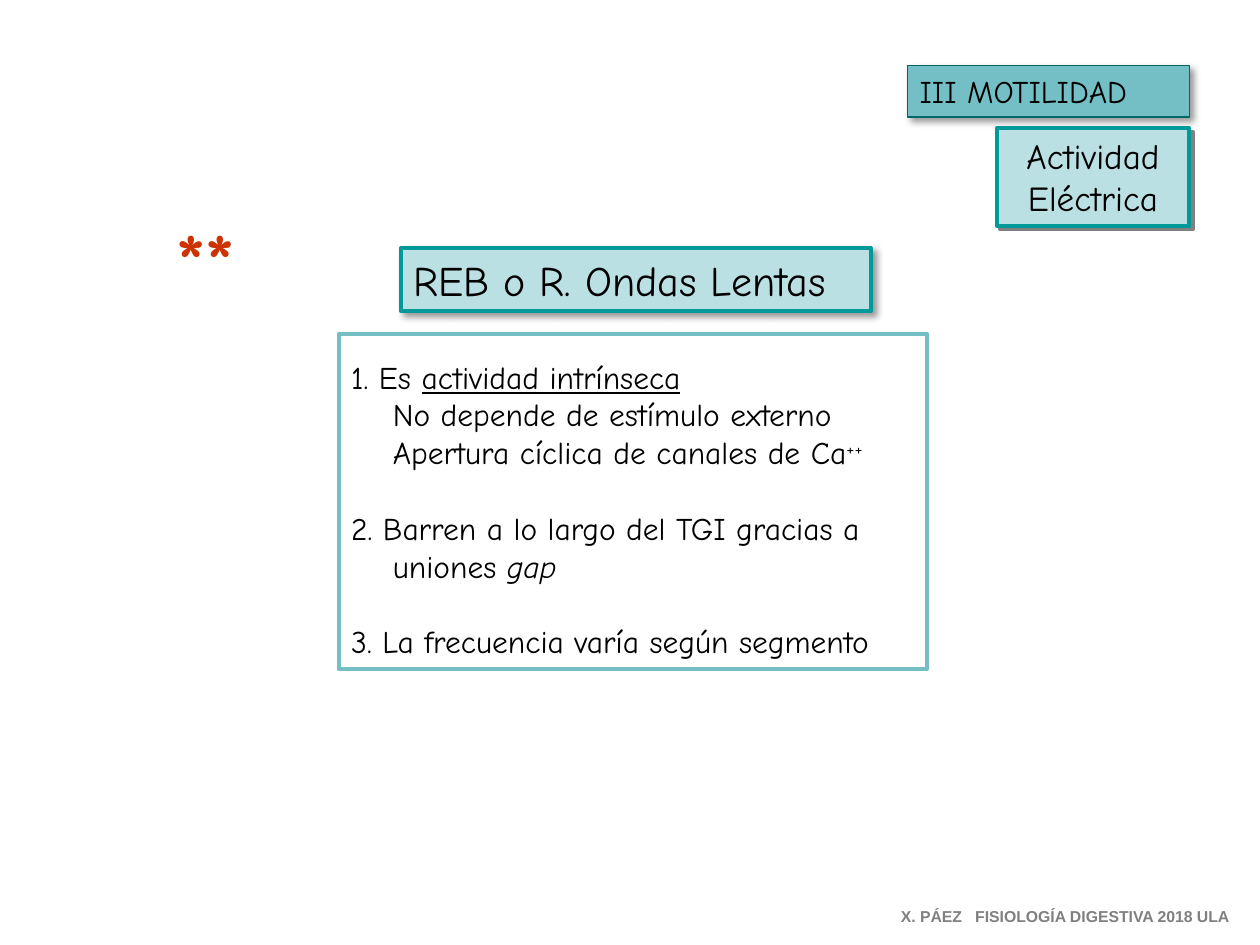
from dataclasses import dataclass

from lxml import etree
from pptx import Presentation
from pptx.dml.color import RGBColor
from pptx.enum.shapes import MSO_SHAPE
from pptx.enum.text import MSO_ANCHOR, MSO_AUTO_SIZE, PP_ALIGN
from pptx.oxml.ns import qn
from pptx.util import Cm, Pt

RECTANGLE = MSO_SHAPE.RECTANGLE
TOP = MSO_ANCHOR.TOP
NO_AUTOFIT = MSO_AUTO_SIZE.NONE
LEFT, CENTER = PP_ALIGN.LEFT, PP_ALIGN.CENTER
TITLE_ONLY = 5


@dataclass(frozen=True)
class Theme:
    font: str = "Comic Neue"
    footer_font: str = "Arial"
    text: str = "000000"
    pale: str = "BBE0E3"
    teal: str = "73BFC5"
    frame: str = "74BEC4"
    border: str = "009999"
    dark_border: str = "006666"
    accent: str = "CC3300"
    gray: str = "808080"
    title_size: int = 24
    topic_size: int = 20
    body_size: int = 18
    mark_size: int = 44
    footer_size: int = 9


THEME = Theme()
# Colour, opacity in percent, blur and distance in points
SOFT_SHADOW = ("000000", 40, 4, 3)
HARD_SHADOW = (THEME.gray, 100, 0, 2.8)


def add_shadow(effects, color, opacity, blur, distance):
    """Put a shadow toward the lower right into an effect list."""
    shadow = etree.SubElement(
        effects, qn("a:outerShdw"), blurRad=str(Pt(blur)),
        dist=str(Pt(distance)), dir="2700000", algn="tl", rotWithShape="0")
    shade = etree.SubElement(shadow, qn("a:srgbClr"), val=color)
    etree.SubElement(shade, qn("a:alpha"), val=str(opacity * 1000))


def place(shape, left, top, width, height):
    shape.left, shape.top = Cm(left), Cm(top)
    shape.width, shape.height = Cm(width), Cm(height)


def prepare_text(shape, top_margin=0.13):
    frame = shape.text_frame
    frame.word_wrap = True
    frame.auto_size = NO_AUTOFIT
    frame.vertical_anchor = TOP
    frame.margin_left = frame.margin_right = Cm(0.25)
    frame.margin_top, frame.margin_bottom = Cm(top_margin), Cm(0.13)
    return frame


def add_run(paragraph, text, size, color=THEME.text, font=THEME.font, bold=False):
    run = paragraph.add_run()
    run.text = text
    run.font.size = Pt(size)
    run.font.bold = bold
    run.font.color.rgb = RGBColor.from_string(color)
    run.font.name = font
    return run


def style_box(shape, fill, line, line_width, shadow=None):
    if fill:
        shape.fill.solid()
        shape.fill.fore_color.rgb = RGBColor.from_string(fill)
    else:
        shape.fill.background()
    shape.line.color.rgb = RGBColor.from_string(line)
    shape.line.width = Pt(line_width)
    shape.shadow.inherit = False
    if shadow:
        effects = shape.element.spPr.find(qn("a:effectLst"))
        add_shadow(effects, *shadow)


def add_title(slide, text):
    title = slide.shapes.title
    place(title, 8.08, 5, 9.47, 1.27)
    style_box(title, THEME.pale, THEME.border, 2.25, SOFT_SHADOW)
    paragraph = prepare_text(title).paragraphs[0]
    paragraph.alignment = LEFT
    add_run(paragraph, text, THEME.title_size)


def add_label(slide, bounds, text, size, style, alignment=LEFT):
    label = slide.shapes.add_shape(RECTANGLE, *map(Cm, bounds))
    style_box(label, *style)
    paragraph = prepare_text(label).paragraphs[0]
    paragraph.alignment = alignment
    add_run(paragraph, text, size)


def add_body(slide):
    body = slide.shapes.add_shape(RECTANGLE, Cm(6.83), Cm(6.73), Cm(11.86), Cm(6.76))
    style_box(body, None, THEME.frame, 2.25)
    frame = prepare_text(body, top_margin=0.48)

    def add_line(*pieces, detail=False, gap=False):
        first = not frame.paragraphs[0].runs
        paragraph = frame.paragraphs[0] if first else frame.add_paragraph()
        paragraph.alignment = LEFT
        paragraph.space_before = Pt(21.6 if gap else 0)
        properties = paragraph._p.get_or_add_pPr()
        properties.set("marL", str(Cm(0.84 if detail else 0)))
        return [add_run(paragraph, piece, THEME.body_size) for piece in pieces]

    intrinsic = add_line("1. Es ", "actividad intrínseca")[1]
    intrinsic.font.underline = True
    add_line("No depende de estímulo externo", detail=True)
    charge = add_line("Apertura cíclica de canales de Ca", "++", detail=True)[1]
    charge.font._element.set("baseline", "30000")
    add_line("2. Barren a lo largo del TGI gracias a", gap=True)
    gap_word = add_line("uniones ", "gap", detail=True)[1]
    gap_word.font.italic = True
    add_line("3. La frecuencia varía según segmento", gap=True)


def add_mark(slide):
    mark = slide.shapes.add_textbox(Cm(3.3), Cm(4.14), Cm(2.16), Cm(2.13))
    paragraph = prepare_text(mark).paragraphs[0]
    run = add_run(paragraph, "**", THEME.mark_size, THEME.accent, bold=True)
    effects = etree.Element(qn("a:effectLst"))
    run.font._element.find(qn("a:solidFill")).addnext(effects)
    add_shadow(effects, "000000", 100, 0, 3)


def add_footer(slide):
    footer = slide.shapes.add_textbox(Cm(17.91), Cm(18.14), Cm(7.42), Cm(0.64))
    paragraph = prepare_text(footer).paragraphs[0]
    tabs = etree.SubElement(paragraph._p.get_or_add_pPr(), qn("a:tabLst"))
    etree.SubElement(tabs, qn("a:tab"), pos=str(Cm(1.5)), algn="l")
    add_run(paragraph, "X. PÁEZ\tFISIOLOGÍA DIGESTIVA 2018 ULA",
            THEME.footer_size, THEME.gray, THEME.footer_font, bold=True)


def main():
    presentation = Presentation()
    presentation.slide_width, presentation.slide_height = Cm(25.4), Cm(19.05)
    slide = presentation.slides.add_slide(presentation.slide_layouts[TITLE_ONLY])

    # Main content
    add_title(slide, "REB o R. Ondas Lentas")
    add_body(slide)
    add_mark(slide)

    # Chapter and topic labels
    add_label(slide, (18.29, 1.32, 5.69, 1.04), "III MOTILIDAD", THEME.body_size,
              (THEME.teal, THEME.dark_border, 0.75, SOFT_SHADOW))
    add_label(slide, (20.09, 2.59, 3.89, 1.96), "Actividad Eléctrica",
              THEME.topic_size, (THEME.pale, THEME.border, 2.25, HARD_SHADOW), CENTER)

    add_footer(slide)
    presentation.save("out.pptx")


if __name__ == "__main__":
    main()
